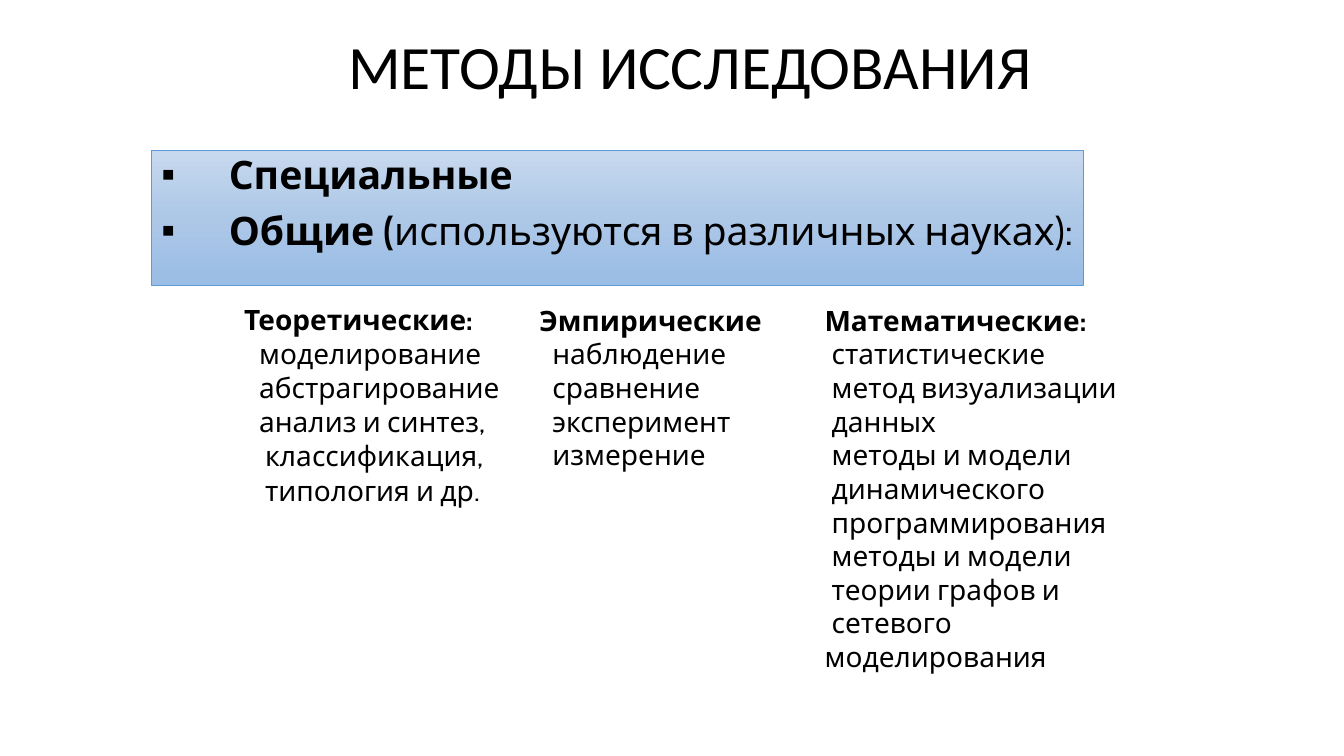
import copy
import pptx
import pptx.util
import pptx.dml.color
import pptx.enum.text
import pptx.oxml.ns
from lxml import etree

Inches = pptx.util.Inches
Pt = pptx.util.Pt
RGB = pptx.dml.color.RGBColor.from_string
qn = pptx.oxml.ns.qn
ALIGN = pptx.enum.text.PP_ALIGN
ANCHOR = pptx.enum.text.MSO_ANCHOR
FIT = pptx.enum.text.MSO_AUTO_SIZE

COLORS = {"text": "000000", "line": "5B9BD5", "top": "C7D9EE",
          "mid": "ADC7E7", "end": "9ABDE5"}


def add_run(para, text, size, bold=False, face="Cabin"):
    run = para.add_run()
    run.text = text
    form = {"size": Pt(size), "bold": bold, "name": face}
    for key, value in form.items():
        setattr(run.font, key, value)
    run.font.color.rgb = RGB(COLORS["text"])


def fill_list(frame, head, items, indents, hang):
    add_run(frame.paragraphs[0], head, 20, True)
    for item, indent in zip(items, indents):
        para = frame.add_paragraph()
        para._p.get_or_add_pPr().set(hang, str(Inches(indent)))
        add_run(para, item, 20)


deck = pptx.Presentation()
deck.slide_width = Inches(13.33)
deck.slide_height = Inches(7.5)
slide = deck.slides.add_slide(deck.slide_layouts[1])

title = slide.shapes.title
body = slide.placeholders[1]
places = [(title, (1.27, 0.02, 11.15, 1.34), ANCHOR.MIDDLE),
          (body, (1.5, 1.49, 9.25, 1.34), ANCHOR.TOP)]
for shape, place, anchor in places:
    for key, value in zip(("left", "top", "width", "height"), place):
        setattr(shape, key, Inches(value))
    form = {"word_wrap": True, "auto_size": FIT.NONE, "vertical_anchor": anchor}
    for key, value in form.items():
        setattr(shape.text_frame, key, value)

para = title.text_frame.paragraphs[0]
para.alignment = ALIGN.CENTER
para.line_spacing = 0.9
add_run(para, "МЕТОДЫ ИССЛЕДОВАНИЯ", 44, face="Calibri")

body.fill.gradient()
body.fill.gradient_angle = 270
for stop, name in zip(body.fill.gradient_stops, ("top", "end")):
    stop.color.rgb = RGB(COLORS[name])
stops = body._element.spPr.find(".//" + qn("a:gsLst"))
stops.insert(1, copy.deepcopy(stops[0]))
stops[1].set("pos", "50000")
body.fill.gradient_stops[1].color.rgb = RGB(COLORS["mid"])
body.line.color.rgb = RGB(COLORS["line"])
body.line.width = Pt(0.5)

groups = [[("Специальные", True)],
          [("Общие (", True), ("используются в различных науках):", False)]]
for row, group in enumerate(groups):
    frame = body.text_frame
    para = frame.add_paragraph() if row else frame.paragraphs[0]
    form = {"line_spacing": 0.9, "space_before": Pt(10)}
    for key, value in form.items():
        setattr(para, key, value)
    props = para._p.get_or_add_pPr()
    props.set("marL", str(Inches(0.67)))
    props.set("indent", str(-Inches(0.67)))
    etree.SubElement(props, qn("a:buChar")).set("char", "▪")
    for text, bold in group:
        add_run(para, text, 28, bold)

holder = slide.shapes.add_table(2, 1, Inches(2.02), Inches(2.96),
                                Inches(3.07), Inches(3.87))
table = holder.table
table.first_row = False
table.horz_banding = False
for row, height in enumerate((2.1, 1.77)):
    table.rows[row].height = Inches(height)
    table.cell(row, 0).fill.background()
frame = table.cell(0, 0).text_frame
fill_list(frame, "Теоретические:",
          ["моделирование", "абстрагирование", "анализ и синтез,",
           "классификация,", "типология и др."],
          [0.45] * 3 + [0.51] * 2, "marL")
frame.paragraphs[0].alignment = ALIGN.CENTER

columns = [
    ((8.08, 2.96, 3.31, 4.11), "Математические:", 0.07,
     ["статистические", "метод визуализации", "данных", "методы и модели",
      "динамического", "программирования", "методы и модели",
      "теории графов и", "сетевого моделирования"]),
    ((5.25, 2.96, 2.68, 1.78), "Эмпирические", 0.13,
     ["наблюдение", "сравнение", "эксперимент", "измерение"]),
]
for place, head, indent, items in columns:
    box = slide.shapes.add_textbox(*map(Inches, place))
    box.text_frame.word_wrap = True
    fill_list(box.text_frame, head, items, [indent] * len(items), "indent")

deck.save("out.pptx")
